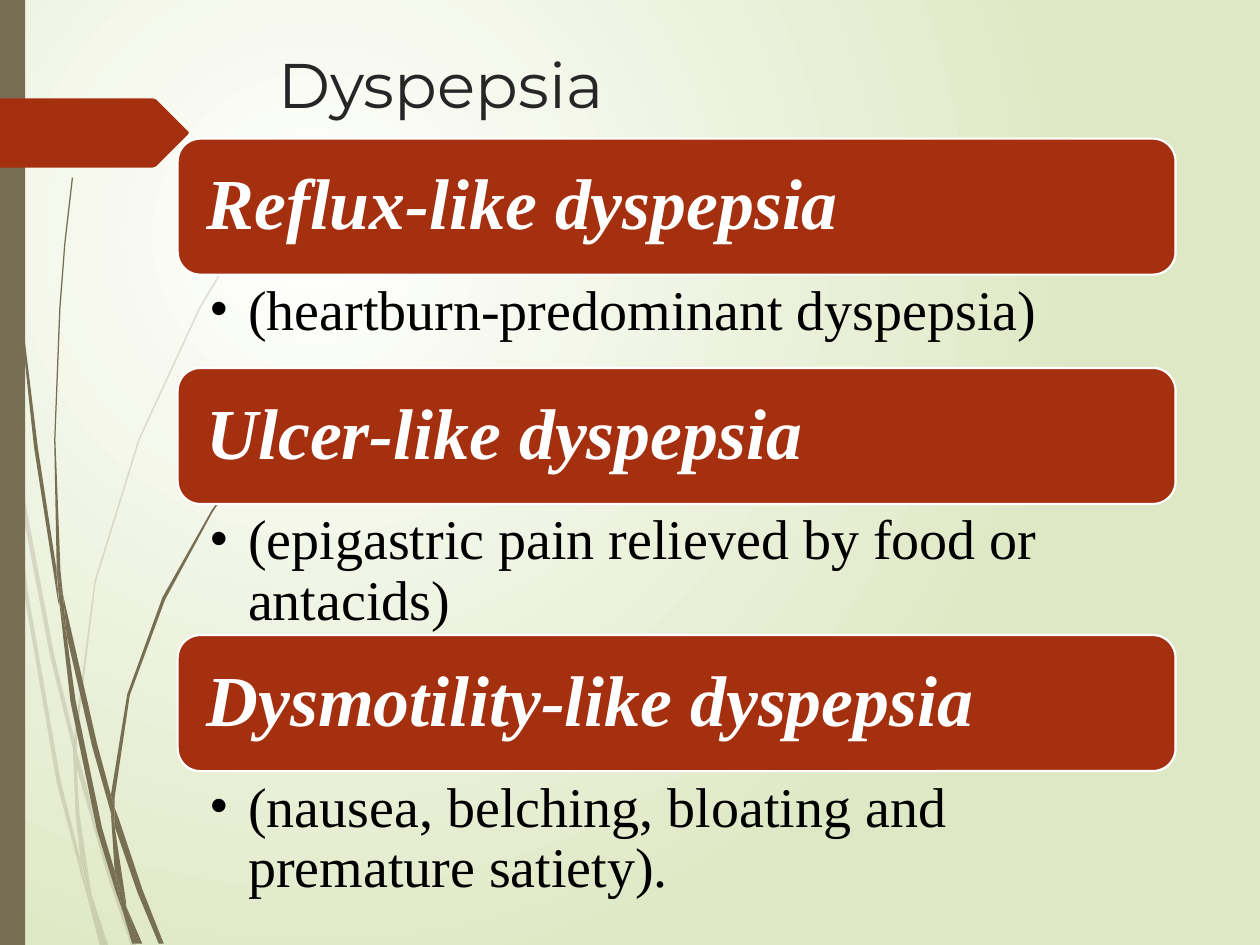
from typing import NamedTuple

from lxml import etree
from pptx import Presentation
from pptx.dml.color import RGBColor
from pptx.enum.shapes import MSO_SHAPE
from pptx.enum.text import MSO_ANCHOR
from pptx.oxml import parse_xml
from pptx.oxml.ns import nsdecls, qn
from pptx.util import Inches, Pt

RECT, ROUNDED = MSO_SHAPE.RECTANGLE, MSO_SHAPE.ROUNDED_RECTANGLE
TOP, MIDDLE = MSO_ANCHOR.TOP, MSO_ANCHOR.MIDDLE

WHITE = RGBColor(0xFF, 0xFF, 0xFF)
BLACK = RGBColor(0, 0, 0)
PALE_GREEN = RGBColor(0xDF, 0xE8, 0xC4)
OLIVE = RGBColor(0x76, 0x6F, 0x54)
RUST = RGBColor(0xA5, 0x30, 0x10)
CHARCOAL = RGBColor(0x26, 0x26, 0x26)

TITLE_FONT = dict(name="Montserrat", size=Pt(36))
HEADING_FONT = dict(name="Times New Roman", size=Pt(41), bold=True, italic=True)
DETAIL_FONT = dict(name="Times New Roman", size=Pt(32))

Points = list[tuple[float, float]]


class Box(NamedTuple):
    x: float
    y: float
    w: float
    h: float


class Section(NamedTuple):
    heading: str
    detail: str
    detail_h: float


SECTIONS = [
    Section("Reflux-like dyspepsia", "(heartburn-predominant dyspepsia)", 0.74),
    Section("Ulcer-like dyspepsia", "(epigastric pain relieved by food or antacids)", 1.04),
    Section("Dysmotility-like dyspepsia",
            "(nausea, belching, bloating and premature satiety).", 1.04),
]
LEFT, FIRST_TOP, WIDTH, HEADING_H, PAD = 1.41, 1.1, 7.92, 1.08, 0.06

# Outlines of the grass blades, in inches
FAINT_BLADES = [
    [(0.08, 3.5), (0.06, 3.22), (0, 2.82), (0, 2.99), (0.07, 3.44)],
    [(0.4, 5.22), (0.59, 5.99), (0.59, 5.86), (0.43, 5.2), (0.1, 3.45), (0.12, 3.76)],
    [(0.64, 6.07), (0.61, 5.96), (0.61, 6.1), (0.85, 6.94), (1.04, 7.5), (1.08, 7.5),
     (0.88, 6.92)],
    [(0.83, 7.5), (0.86, 7.5), (0.73, 7.11)],
    [(0.64, 6.83), (0.48, 6.19), (0.22, 4.69), (0.12, 3.76), (0.08, 3.5), (0.19, 4.7),
     (0.45, 6.21), (0.64, 6.93), (0.7, 7.14), (0.69, 7.07)],
    [(0.58, 5.99), (0.6, 6.46), (0.64, 6.83), (0.67, 6.92), (0.73, 7.11), (0.72, 7.06),
     (0.63, 6.46), (0.61, 6.1), (0.61, 6.08)],
    [(0.61, 5.84), (0.76, 4.62), (1.11, 3.49), (1.59, 2.45), (1.87, 1.98), (2.01, 1.75),
     (2.17, 1.54), (2.17, 1.53), (2.01, 1.75), (1.86, 1.97), (1.58, 2.44), (1.1, 3.48),
     (0.75, 4.61), (0.59, 5.84), (0.59, 5.86), (0.61, 5.96)],
    [(0.7, 7.14), (0.79, 7.5), (0.82, 7.5)],
    [(0.61, 6.08), (0.61, 6.1), (0.61, 5.96), (0.59, 5.86), (0.58, 5.99)],
    [(0.67, 6.92), (0.65, 6.83), (0.69, 7.07), (0.7, 7.14), (0.82, 7.5), (0.83, 7.5),
     (0.73, 7.11)],
]
SOLID_BLADES = [
    [(0.05, 1.1), (0.14, 2.33), (0.27, 3.55), (0.46, 4.77), (0.47, 4.81), (0.45, 4.57),
     (0.45, 4.53), (0.3, 3.55), (0.15, 2.32), (0.06, 1.09), (0.04, 0.48), (0.03, 0),
     (0.02, 0), (0.03, 0.48)],
    [(0.73, 5.92), (0.88, 6.45), (0.88, 6.33), (0.88, 6.31), (0.77, 5.9), (0.5, 4.72),
     (0.53, 5.05)],
    [(0.94, 6.49), (0.91, 6.41), (0.91, 6.56), (1.09, 7.08), (1.26, 7.49), (1.3, 7.49),
     (1.13, 7.06)],
    [(0.91, 6.91), (0.81, 6.57), (0.6, 5.56), (0.53, 5.05), (0.47, 4.77), (0.56, 5.57),
     (0.77, 6.59), (0.92, 7.08), (0.97, 7.22), (0.96, 7.17)],
    [(0.5, 4.72), (0.48, 4.53), (0.44, 3.49), (0.48, 2.45), (0.52, 1.93), (0.58, 1.41),
     (0.57, 1.41), (0.51, 1.93), (0.47, 2.45), (0.43, 3.49), (0.45, 4.49), (0.49, 4.72)],
    [(1.1, 7.49), (1.13, 7.49), (1, 7.19)],
    [(0.47, 4.77), (0.53, 5.05), (0.5, 4.72), (0.49, 4.72), (0.45, 4.49), (0.45, 4.53)],
    [(0.91, 6.33), (1.03, 5.52), (1.31, 4.76), (1.69, 4.06), (1.91, 3.74), (2.03, 3.59),
     (2.16, 3.44), (2.15, 3.44), (2.03, 3.58), (1.91, 3.73), (1.68, 4.05), (1.29, 4.74),
     (1.01, 5.51), (0.88, 6.31), (0.91, 6.41)],
    [(0.97, 7.22), (1.05, 7.49), (1.08, 7.49)],
    [(0.88, 6.45), (0.91, 6.91), (0.96, 7.06), (1, 7.19), (1, 7.16), (0.91, 6.56),
     (0.9, 6.51)],
    [(0.88, 6.45), (0.9, 6.51), (0.91, 6.56), (0.91, 6.41), (0.88, 6.31), (0.88, 6.33)],
    [(0.96, 7.06), (0.91, 6.91), (0.96, 7.17), (0.97, 7.22), (1.08, 7.49), (1.1, 7.49),
     (1, 7.19)],
]
TAG = [(1.49, 1.07), (1.24, 1.32), (1.21, 1.33), (0, 1.33), (0, 0.78), (1.21, 0.78),
       (1.24, 0.79), (1.49, 1.04), (1.5, 1.05)]


def paint(sp, color: RGBColor) -> None:
    sp.shadow.inherit = False
    sp.fill.solid()
    sp.fill.fore_color.rgb = color
    sp.line.fill.background()


def add_outline(slide, points: Points, color: RGBColor, opacity: int = 100) -> None:
    start, *rest = [(Inches(x), Inches(y)) for x, y in points]
    builder = slide.shapes.build_freeform(*start)
    builder.add_line_segments(rest)
    sp = builder.convert_to_shape()
    paint(sp, color)
    if opacity < 100:
        clr = sp.fill._xPr.find(".//" + qn("a:srgbClr"))
        etree.SubElement(clr, qn("a:alpha")).set("val", str(opacity * 1000))


def add_block(slide, kind, box: Box, color: RGBColor):
    sp = slide.shapes.add_shape(kind, *map(Inches, box))
    paint(sp, color)
    return sp


def add_text(slide, box: Box, text: str, font: dict, color: RGBColor,
             insets=(0.1, 0.05, 0.1, 0.05), anchor=TOP, spacing: float = 1.0):
    tf = slide.shapes.add_textbox(*map(Inches, box)).text_frame
    tf.word_wrap = True
    tf.vertical_anchor = anchor
    for side, inset in zip(("left", "top", "right", "bottom"), insets):
        setattr(tf, f"margin_{side}", Inches(inset))
    p = tf.paragraphs[0]
    p.line_spacing = spacing
    r = p.add_run()
    r.text = text
    for name, value in font.items():
        setattr(r.font, name, value)
    r.font.color.rgb = color
    return p


def add_bullet(p, indent: float, typeface: str) -> None:
    pPr = p._p.get_or_add_pPr()
    pPr.set("marL", str(Inches(indent)))
    pPr.set("indent", str(-Inches(indent)))
    etree.SubElement(pPr, qn("a:buFont")).set("typeface", typeface)
    etree.SubElement(pPr, qn("a:buChar")).set("char", "•")


def add_section(slide, section: Section, top: float) -> None:
    bar = add_block(slide, ROUNDED, Box(LEFT, top, WIDTH, HEADING_H), RUST)
    bar.line.color.rgb = WHITE
    bar.line.width = Pt(1.25)
    inner = Box(LEFT + PAD, top + PAD, WIDTH - 2 * PAD, HEADING_H - 2 * PAD)
    add_text(slide, inner, section.heading, HEADING_FONT, WHITE, (0.17,) * 4, MIDDLE, 0.9)
    p = add_text(slide, Box(LEFT, top + HEADING_H, WIDTH, section.detail_h),
                 section.detail, DETAIL_FONT, BLACK, (0.25, 0.06, 0.32, 0.06), TOP, 0.9)
    add_bullet(p, 0.31, DETAIL_FONT["name"])


def set_background(slide) -> None:
    fill = slide.background.fill
    fill.gradient()
    for stop, color in zip(fill.gradient_stops, (WHITE, PALE_GREEN)):
        stop.color.rgb = color
    lin = slide.background._cSld.find(".//" + qn("a:lin"))
    lin.getparent().replace(lin, parse_xml(
        f'<a:path {nsdecls("a")} path="circle">'
        '<a:fillToRect l="50000" t="50000" r="100000" b="100000"/></a:path>'))


def main() -> None:
    prs = Presentation()
    prs.slide_width, prs.slide_height = Inches(10), Inches(7.5)
    slide = prs.slides.add_slide(prs.slide_layouts[6])

    # Backdrop: grass blades, side band and tag
    set_background(slide)
    for blade in FAINT_BLADES:
        add_outline(slide, blade, OLIVE, opacity=20)
    for blade in SOLID_BLADES:
        add_outline(slide, blade, OLIVE)
    add_block(slide, RECT, Box(0, 0, 0.2, 7.5), OLIVE)
    add_outline(slide, TAG, RUST)

    # Title
    add_text(slide, Box(2.11, 0.31, 7.21, 1.4), "Dyspepsia", TITLE_FONT, CHARCOAL)

    # Stacked headings, each followed by its detail
    top = FIRST_TOP
    for section in SECTIONS:
        add_section(slide, section, top)
        top += HEADING_H + section.detail_h

    prs.save("out.pptx")


if __name__ == "__main__":
    main()
